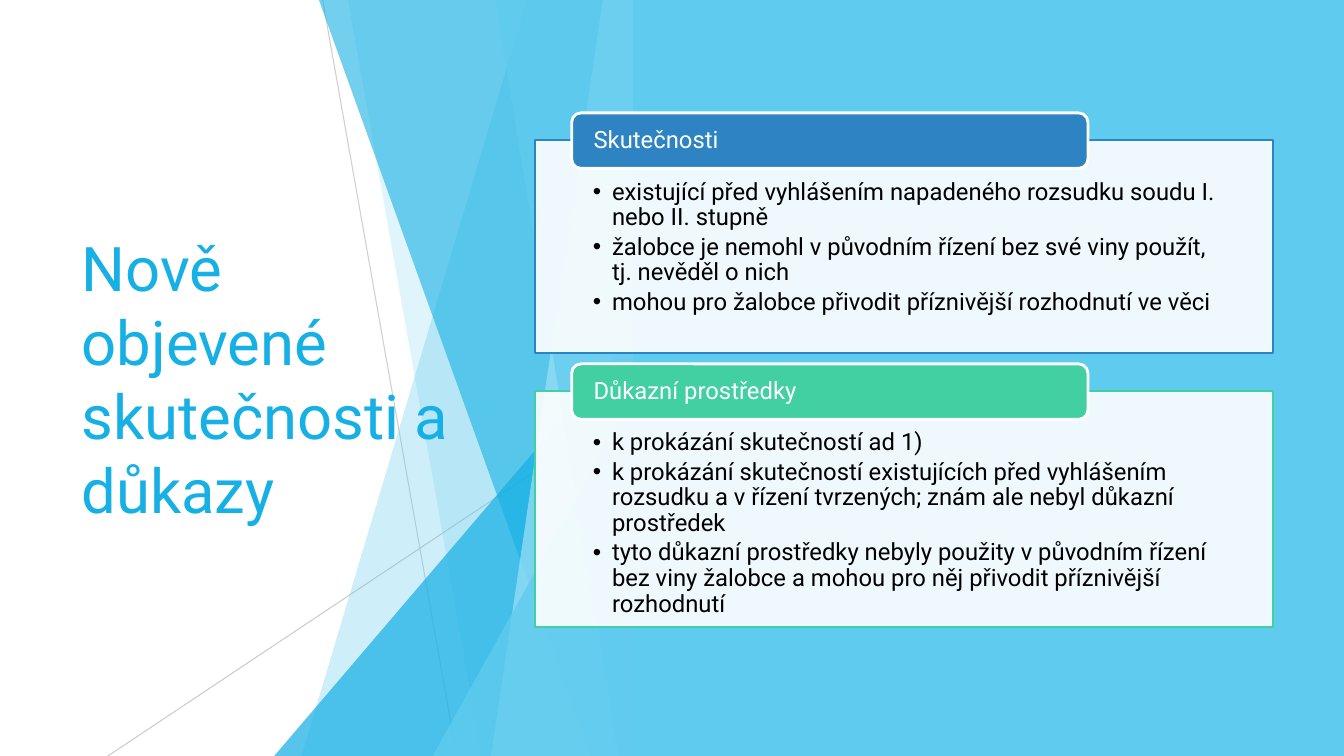
"""Build the slide on newly discovered facts and evidence."""
import pptx
import pptx.dml.color
import pptx.enum.shapes
import pptx.enum.text
import pptx.util
from lxml import etree
from pptx.oxml import ns

Inches, Pt = pptx.util.Inches, pptx.util.Pt
RGB = pptx.dml.color.RGBColor.from_string
SHAPE = pptx.enum.shapes.MSO_SHAPE
ANCHOR = pptx.enum.text.MSO_ANCHOR
FONT = "Roboto"
COLORS = {
    "sky": "5FCBEF", "azure": "17B0E4", "pale": "9FE0F5", "blue": "2E83C3",
    "green": "42D0A2", "gray": "BFBFBF", "white": "FFFFFF", "black": "000000",
}


def paint(fill, shape, color, opacity=100):
    fill.solid()
    fill.fore_color.rgb = RGB(COLORS[color])
    if opacity < 100:
        tint = shape.element.spPr.find(".//" + ns.qn("a:srgbClr"))
        etree.SubElement(tint, ns.qn("a:alpha")).set("val", str(opacity * 1000))


def write(frame, text, size, color, anchor, margins):
    frame.text = text
    frame.word_wrap = True
    frame.auto_size = pptx.enum.text.MSO_AUTO_SIZE.NONE
    frame.vertical_anchor = anchor
    (frame.margin_left, frame.margin_top,
     frame.margin_right, frame.margin_bottom) = map(Inches, margins)
    for paragraph in frame.paragraphs:
        paragraph.alignment = pptx.enum.text.PP_ALIGN.LEFT
        for run in paragraph.runs:
            run.font.name = FONT
            run.font.size = Pt(size)
            run.font.color.rgb = RGB(COLORS[color])


deck = pptx.Presentation()
deck.slide_width, deck.slide_height = Inches(13.33), Inches(7.5)
slide = deck.slides.add_slide(deck.slide_layouts[3])
shapes = slide.shapes
title, *lists = slide.placeholders
layers = title.element.getparent()

EDGE = 6.28
TOP, BOTTOM = -0.01, 7.5

for start_x, start_y, end_x, opacity in [(3.2, 0, 4.53, 75), (EDGE, 4.03, 1.07, 80)]:
    ray = shapes.add_connector(
        pptx.enum.shapes.MSO_CONNECTOR.STRAIGHT,
        Inches(start_x), Inches(start_y), Inches(end_x), Inches(BOTTOM))
    ray.line.width = Pt(0.75)
    paint(ray.line.fill, ray, "gray", opacity)
    etree.SubElement(ray.element.spPr, ns.qn("a:effectLst"))

facets = [
    ("band", 5.23, 2.99, "sky", 30),
    ("band", 3.45, 4.78, "sky", 20),
    ("triangle", 2.72, 3.33, "azure", 72),
    ("band", 3.16, 5.86, "azure", 60),
    ("band", 5.98, 4.87, "pale", 70),
    ("band", 4.91, 6.13, "sky", 65),
    ("triangle", 4.29, 3.93, "sky", 80),
]
for kind, first, second, color, opacity in facets:
    if kind == "band":
        outline = shapes.build_freeform(Inches(first), Inches(TOP))
        outline.add_line_segments(
            [(Inches(x), Inches(y)) for x, y in
             [(EDGE, TOP), (EDGE, BOTTOM), (second, BOTTOM)]])
        facet = outline.convert_to_shape()
    else:
        facet = shapes.add_shape(
            SHAPE.ISOSCELES_TRIANGLE, Inches(first), Inches(second),
            Inches(EDGE - first), Inches(BOTTOM - second))
        facet.adjustments[0] = 1
    paint(facet.fill, facet, color, opacity)
    facet.line.fill.background()
    facet.shadow.inherit = False

layers.append(title.element)
title.left, title.top = Inches(0.71), Inches(1.51)
title.width, title.height = Inches(3.88), Inches(4.48)
write(title.text_frame, "Nově objevené skutečnosti a důkazy", 44, "azure",
      ANCHOR.MIDDLE, (0.1, 0.05, 0.1, 0.05))

backdrop = shapes.add_shape(
    SHAPE.RECTANGLE, Inches(EDGE), 0, Inches(13.33 - EDGE), Inches(7.5))
paint(backdrop.fill, backdrop, "sky")
backdrop.line.fill.background()
backdrop.shadow.inherit = False

sections = [
    ("Skutečnosti", "blue", 1.39, 2.11, [
        "existující před vyhlášením napadeného rozsudku soudu I. nebo II. stupně",
        "žalobce je nemohl v původním řízení bez své viny použít, tj. nevěděl o nich",
        "mohou pro žalobce přivodit příznivější rozhodnutí ve věci",
    ]),
    ("Důkazní prostředky", "green", 3.88, 2.34, [
        "k prokázání skutečností ad 1)",
        "k prokázání skutečností existujících před vyhlášením rozsudku a v řízení "
        "tvrzených; znám ale nebyl důkazní prostředek",
        "tyto důkazní prostředky nebyly použity v původním řízení bez viny žalobce "
        "a mohou pro něj přivodit příznivější rozhodnutí",
    ]),
]
for points, (heading, color, top, height, lines) in zip(lists, sections):
    layers.append(points.element)
    points.left, points.top = Inches(5.31), Inches(top)
    points.width, points.height = Inches(7.32), Inches(height)
    paint(points.fill, points, "white", 90)
    points.line.color.rgb = RGB(COLORS[color])
    points.line.width = Pt(1.5)
    write(points.text_frame, "\n".join(lines), 17, "black",
          ANCHOR.TOP, (0.57, 0.39, 0.57, 0.13))
    for point in points.text_frame.paragraphs:
        point.level = 1
        point.line_spacing = 0.9
        point.space_before = Pt(0)
        point.space_after = Pt(2.55)
        layout = point._p.get_or_add_pPr()
        layout.set("marL", str(Inches(0.19)))
        layout.set("indent", str(Inches(-0.19)))
        etree.SubElement(layout, ns.qn("a:buChar")).set("char", "•")

    header = shapes.add_shape(
        SHAPE.ROUNDED_RECTANGLE, Inches(5.67), Inches(top - 0.27),
        Inches(5.12), Inches(0.55))
    paint(header.fill, header, color)
    header.line.color.rgb = RGB(COLORS["white"])
    header.line.width = Pt(2)
    header.shadow.inherit = False
    write(header.text_frame, heading, 17, "white", ANCHOR.MIDDLE, (0.19, 0, 0.19, 0))
    header.text_frame.paragraphs[0].line_spacing = 0.9

deck.save("out.pptx")
